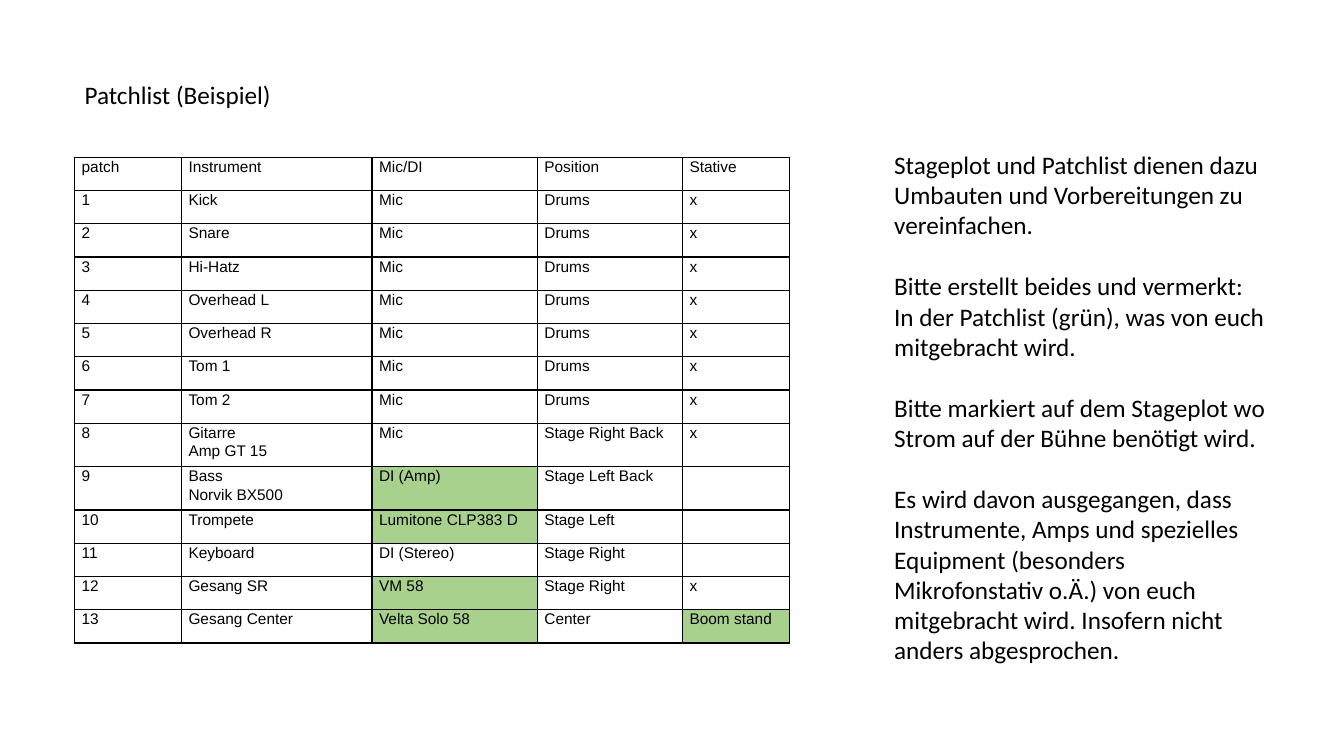
import pptx
import pptx.dml.color
import pptx.enum.text
import pptx.oxml
import pptx.oxml.ns
import pptx.util
from pptx.util import Inches

COLORS = {"text": "000000", "border": "000000", "brought": "A9D18E"}


def style(p, font, size):
    p.font.name = font
    p.font.size = pptx.util.Pt(size)
    p.font.color.rgb = pptx.dml.color.RGBColor.from_string(COLORS["text"])


def add_text(s, left, top, width, height, paragraphs):
    tf = s.shapes.add_textbox(Inches(left), Inches(top), Inches(width), Inches(height)).text_frame
    tf.word_wrap = True
    tf.auto_size = pptx.enum.text.MSO_AUTO_SIZE.SHAPE_TO_FIT_TEXT
    for i, text in enumerate(paragraphs):
        p = tf.paragraphs[0] if i == 0 else tf.add_paragraph()
        p.text = text
        if i:
            p.space_before = pptx.util.Pt(22)
        style(p, "Calibri", 18)


prs = pptx.Presentation()
prs.slide_width, prs.slide_height = Inches(13.33), Inches(7.5)
s = prs.slides.add_slide(prs.slide_layouts[6])

# Patch list: the channel number is the row index
header = ["patch", "Instrument", "Mic/DI", "Position", "Stative"]
drums = ["Kick", "Snare", "Hi-Hatz", "Overhead L", "Overhead R", "Tom 1", "Tom 2"]
channels = [[drum, "Mic", "Drums", "x"] for drum in drums] + [
    ["Gitarre\nAmp GT 15", "Mic", "Stage Right Back", "x"],
    ["Bass\nNorvik BX500", "DI (Amp)", "Stage Left Back", ""],
    ["Trompete", "Lumitone CLP383 D", "Stage Left", ""],
    ["Keyboard", "DI (Stereo)", "Stage Right", ""],
    ["Gesang SR", "VM 58", "Stage Right", "x"],
    ["Gesang Center", "Velta Solo 58", "Center", "Boom stand"],
]
rows = [header] + [[str(n)] + channel for n, channel in enumerate(channels, 1)]
brought = {(9, 2), (10, 2), (12, 2), (13, 2), (13, 4)}
col_widths = [1.06, 1.89, 1.64, 1.44, 1.06]

# Table
table = s.shapes.add_table(len(rows), len(header), Inches(0.74), Inches(1.56),
                           Inches(7.09), Inches(4.84)).table
table.first_row = table.horz_banding = False
for column, width in zip(table.columns, col_widths):
    column.width = Inches(width)
for r, row in enumerate(rows):
    table.rows[r].height = Inches(0.43 if "\n" in row[1] else 0.33)
    for c, text in enumerate(row):
        cell = table.cell(r, c)
        cell.margin_left = cell.margin_right = Inches(0.07)
        cell.margin_top = cell.margin_bottom = 0
        cell.text = text
        for p in cell.text_frame.paragraphs:
            p.line_spacing = 1.07
            style(p, "Arial", 11)
        for side in ("lnL", "lnR", "lnT", "lnB"):
            cell._tc.get_or_add_tcPr().append(pptx.oxml.parse_xml(
                f'<a:{side} {pptx.oxml.ns.nsdecls("a")} w="12700"><a:solidFill>'
                f'<a:srgbClr val="{COLORS["border"]}"/></a:solidFill></a:{side}>'))
        if (r, c) in brought:
            cell.fill.solid()
            cell.fill.fore_color.rgb = pptx.dml.color.RGBColor.from_string(COLORS["brought"])
        else:
            cell.fill.background()

# Title and instructions
add_text(s, 0.74, 0.74, 7.21, 0.4, ["Patchlist (Beispiel)"])
add_text(s, 8.77, 1.43, 4.01, 5.25, [
    "Stageplot und Patchlist dienen dazu Umbauten und Vorbereitungen zu vereinfachen.",
    "Bitte erstellt beides und vermerkt:\vIn der Patchlist (grün), was von euch mitgebracht wird.",
    "Bitte markiert auf dem Stageplot wo Strom auf der Bühne benötigt wird.",
    "Es wird davon ausgegangen, dass Instrumente, Amps und spezielles Equipment "
    "(besonders Mikrofonstativ o.Ä.) von euch mitgebracht wird. "
    "Insofern nicht anders abgesprochen.",
])

prs.save("out.pptx")
